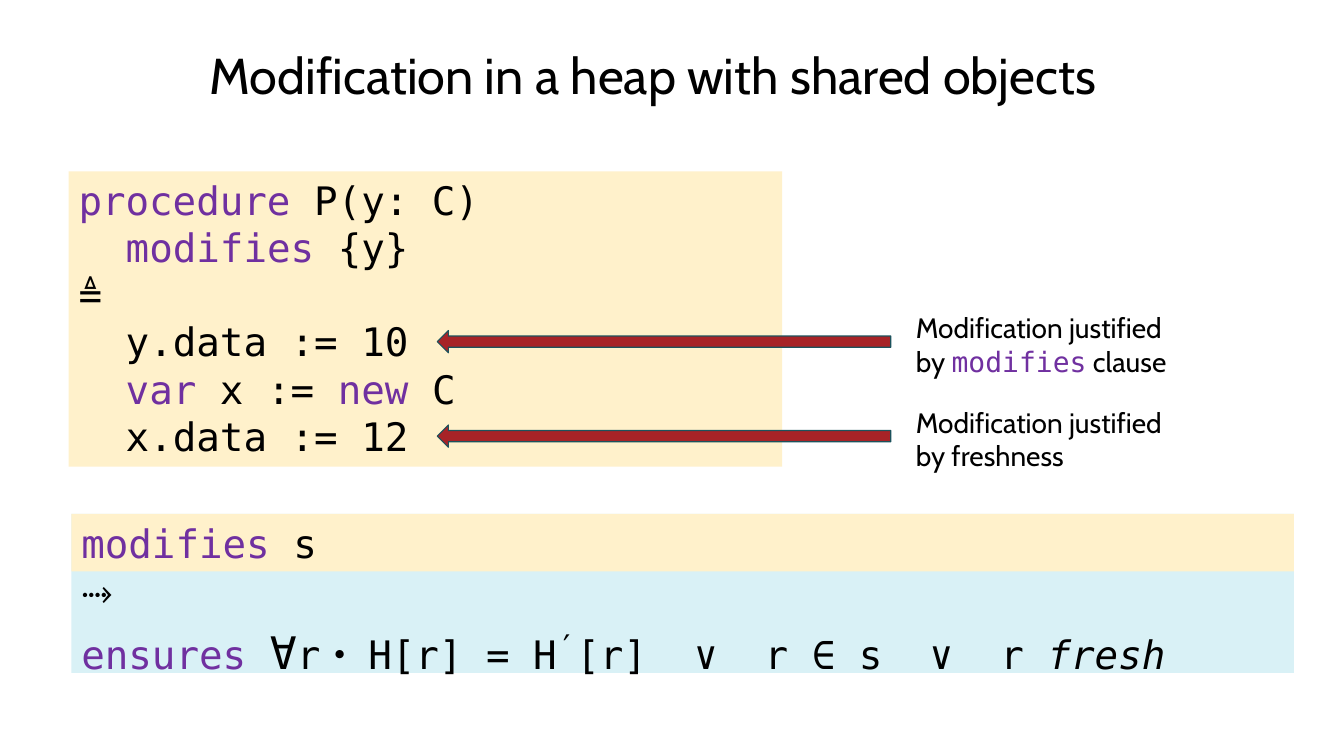
"""Build the slide on modification in a heap with shared objects."""
from dataclasses import dataclass

from pptx import Presentation
from pptx.dml.color import RGBColor as RGB
from pptx.enum.shapes import MSO_SHAPE as Shape
from pptx.enum.text import MSO_ANCHOR as Anchor, PP_ALIGN as Align
from pptx.util import Cm, Pt

COLORS = {
    "text": "000000", "keyword": "7030A0", "code": "FFF1CB",
    "meaning": "D9F1F6", "arrow": "A72327", "outline": "1C525C",
}
PROSE, MONO = "Cabin", "DejaVu Sans Mono"
CODE_INDENT = Cm(1.19)


@dataclass(frozen=True)
class Run:
    text: str
    color: str = "text"
    font: str | None = None
    size: int | None = None
    raised: bool = False
    italic: bool = False


@dataclass(frozen=True)
class Line:
    runs: tuple[Run, ...]
    indented: bool = False


@dataclass(frozen=True)
class Block:
    left: float
    top: float
    width: float
    height: float
    lines: tuple[Line, ...]
    size: int = 28
    font: str = MONO
    fill: str | None = None
    inset_top: float = 0.13


def keyword(text: str) -> Run:
    return Run(text, "keyword")


def line(*runs: Run | str, indented: bool = False) -> Line:
    return Line(tuple(Run(r) if isinstance(r, str) else r for r in runs), indented)


TITLE = Block(5.03, 0.99, 27.41, 1.8,
              (line("Modification in a heap with shared objects"),), 36, PROSE)
PROCEDURE = Block(1.73, 4.32, 17.98, 7.44, (
    line(keyword("procedure"), " P(y: C)"),
    line(keyword("modifies"), " {y}", indented=True),
    line("≜"),
    line("y.data := 10", indented=True),
    line(keyword("var"), " x := ", keyword("new"), " C", indented=True),
    line("x.data := 12", indented=True),
), fill="code")
MEANING = Block(1.8, 12.95, 30.81, 4.01, (
    line("⤑"),
    line(keyword("ensures "), Run("∀", size=32), "r・ H[r] = H",
         Run("′", size=40, raised=True), "[r]  ∨  r ∈ s  ∨  r ",
         Run("fresh", italic=True)),
), fill="meaning", inset_top=1.32)
CLAUSE = Block(1.8, 12.95, 30.81, 1.45,
               (line(keyword("modifies"), " s"),), fill="code")
REASONS = (
    (7.7, line("Modification justified by ",
               Run("modifies", "keyword", MONO), " clause")),
    (10.08, line("Modification justified by freshness")),
)


def rgb(name: str) -> RGB:
    return RGB.from_string(COLORS[name])


def add_block(slide, block: Block) -> None:
    box = tuple(map(Cm, (block.left, block.top, block.width, block.height)))
    if block.fill:
        sp = slide.shapes.add_shape(Shape.RECTANGLE, *box)
        sp.shadow.inherit = False
        sp.fill.solid()
        sp.fill.fore_color.rgb = rgb(block.fill)
        sp.line.fill.background()
    else:
        sp = slide.shapes.add_textbox(*box)
    tf = sp.text_frame
    tf.word_wrap = True
    tf.vertical_anchor = Anchor.TOP
    tf.margin_top = Cm(block.inset_top)
    for i, content in enumerate(block.lines):
        p = tf.add_paragraph() if i else tf.paragraphs[0]
        p.alignment = Align.LEFT
        p.font.size = Pt(block.size)
        if content.indented:
            p._p.get_or_add_pPr().set("marL", str(CODE_INDENT))
        for run in content.runs:
            r = p.add_run()
            r.text = run.text
            r.font.name = run.font or block.font
            r.font.size = Pt(run.size or block.size)
            r.font.color.rgb = rgb(run.color)
            if run.italic:
                r.font.italic = True
            if run.raised:
                r.font._element.set("baseline", "20000")


def add_reason(slide, top: float, text: Line) -> None:
    sp = slide.shapes.add_shape(Shape.LEFT_ARROW, Cm(11.02), Cm(top + 0.63),
                                Cm(11.43), Cm(0.56))
    sp.shadow.inherit = False
    sp.fill.solid()
    sp.fill.fore_color.rgb = rgb("arrow")
    sp.line.color.rgb = rgb("outline")
    sp.line.width = Pt(0.85)
    add_block(slide, Block(22.83, top, 7.14, 1.96, (text,), 20, PROSE))


def main() -> None:
    prs = Presentation()
    prs.slide_width, prs.slide_height = Cm(33.87), Cm(19.05)
    slide = prs.slides.add_slide(prs.slide_layouts[6])
    add_block(slide, TITLE)
    add_block(slide, PROCEDURE)
    for top, text in REASONS:
        add_reason(slide, top, text)
    add_block(slide, MEANING)
    add_block(slide, CLAUSE)
    prs.save("out.pptx")


if __name__ == "__main__":
    main()
